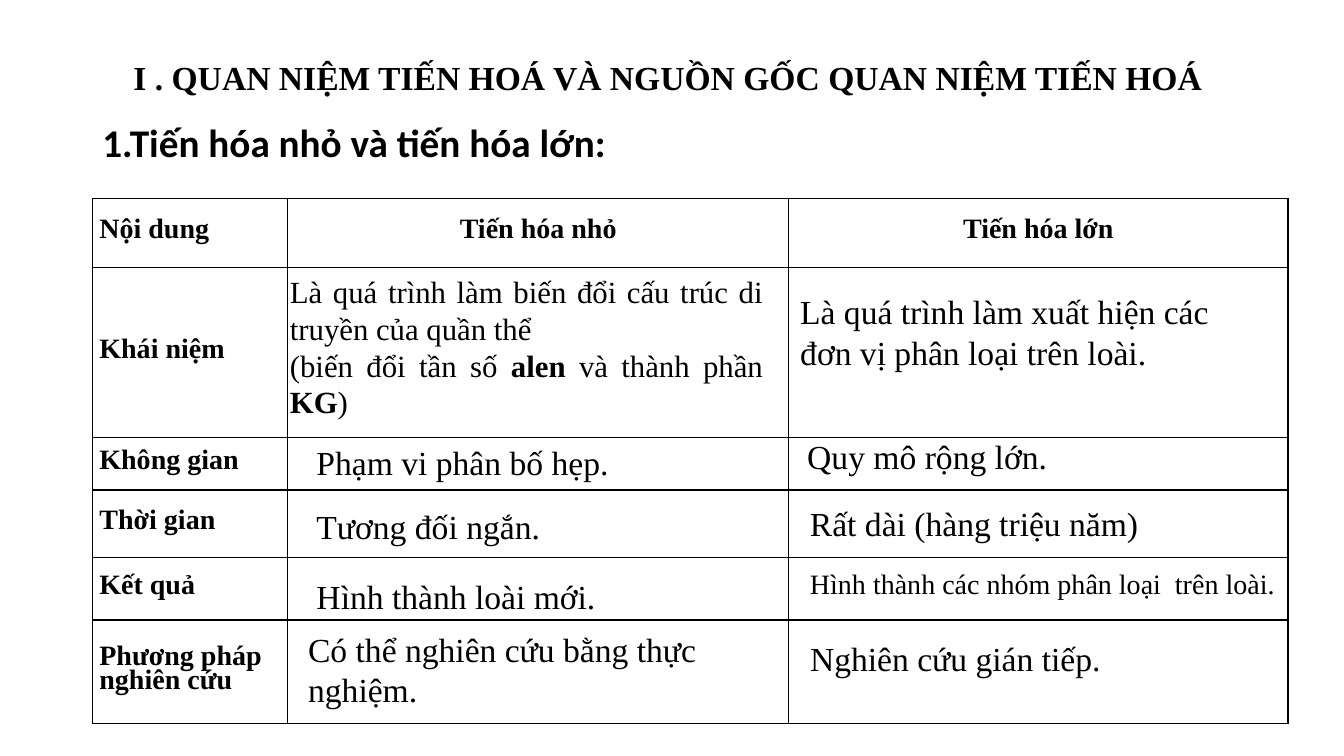
from lxml.etree import SubElement
from pptx import Presentation
from pptx.dml.color import RGBColor
from pptx.enum.text import MSO_ANCHOR, PP_ALIGN
from pptx.oxml.ns import qn
from pptx.util import Pt

# Content
COLORS = {"text": "000000", "border": "000000"}
SERIF = "Times New Roman"
SANS = "Calibri"

TITLE = "I . QUAN NIỆM TIẾN HOÁ VÀ NGUỒN GỐC QUAN NIỆM TIẾN HOÁ "
SUBTITLE = "1.Tiến hóa nhỏ và tiến hóa lớn:"
HEADERS = ["Nội dung", "Tiến hóa nhỏ", "Tiến hóa lớn"]
CRITERIA = ["Khái niệm", "Không gian", "Thời gian", "Kết quả",
            "Phương pháp nghiên cứu"]

# Definition of small evolution: paragraphs of (text, bold) runs
DEFINITION = [
    [("Là quá trình làm biến đổi cấu trúc di truyền của quần thể ", False)],
    [("(biến đổi tần số ", False), ("alen ", True),
     ("và thành phần ", False), ("KG", True), (")", False)],
]

# Answers laid over the table: text, left, top, width, height, size
ANSWERS = [
    ("Là quá trình làm xuất hiện các đơn vị phân loại trên loài.",
     564.5, 204.5, 317, 65.5, 24),
    ("Phạm vi phân bố hẹp.", 219, 312, 330, 36, 24),
    ("Quy mô rộng lớn.", 569.5, 308, 233, 36, 24),
    ("Tương đối ngắn.", 219, 358, 199.5, 36, 24),
    ("Rất dài (hàng triệu năm)", 571.5, 355.5, 257, 36, 24),
    ("Hình thành loài mới.", 219, 407.5, 312.5, 36, 24),
    ("Hình thành các nhóm phân loại  trên loài.", 571.5, 401, 363, 31.5, 20),
    ("Có thể nghiên cứu bằng thực nghiệm.", 213, 445.5, 358.5, 65.5, 24),
    ("Nghiên cứu gián tiếp.", 571.5, 452, 314, 36, 24),
]

# Layout
LEFT = 66
COLUMN_WIDTHS = [139.5, 358, 356.5]
ROW_HEIGHTS = [49, 121.5, 37.5, 48.5, 44.5, 74]


def format_run(run, size, bold=False, font=SERIF):
    run.font.name = font
    run.font.size = Pt(size)
    run.font.bold = bold
    run.font.color.rgb = RGBColor.from_string(COLORS["text"])


def add_text(paragraphs, left, top, width, height, size, font=SERIF):
    """Add a wrapped text box from paragraphs of (text, bold) runs."""
    box = slide.shapes.add_textbox(Pt(left), Pt(top), Pt(width), Pt(height))
    text_frame = box.text_frame
    text_frame.word_wrap = True
    for index, runs in enumerate(paragraphs):
        paragraph = text_frame.add_paragraph() if index else text_frame.paragraphs[0]
        for text, bold in runs:
            run = paragraph.add_run()
            run.text = text
            format_run(run, size, bold, font)
    return text_frame


def set_borders(cell):
    properties = cell._tc.get_or_add_tcPr()
    for position, side in enumerate(("a:lnL", "a:lnR", "a:lnT", "a:lnB")):
        line = SubElement(properties, qn(side), w=str(Pt(1)))
        fill = SubElement(line, qn("a:solidFill"))
        SubElement(fill, qn("a:srgbClr"), val=COLORS["border"])
        properties.insert(position, line)


def fill_cell(cell, text, alignment):
    cell.vertical_anchor = MSO_ANCHOR.MIDDLE
    cell.margin_left = cell.margin_right = Pt(5)
    cell.margin_top = cell.margin_bottom = 0
    cell.text_frame.text = text
    paragraph = cell.text_frame.paragraphs[0]
    paragraph.alignment = alignment
    paragraph.line_spacing = Pt(17)
    format_run(paragraph.runs[0], 20, True)


presentation = Presentation()
presentation.slide_width = Pt(960)
presentation.slide_height = Pt(540)
slide = presentation.slides.add_slide(presentation.slide_layouts[6])

# Subtitle
subtitle = add_text([[(SUBTITLE, True)]], LEFT, 85, 828, 366.5, 28, SANS)
subtitle.paragraphs[0].line_spacing = 0.9
subtitle.paragraphs[0].space_before = Pt(10)

# Comparison table
table = slide.shapes.add_table(
    len(ROW_HEIGHTS), len(COLUMN_WIDTHS), Pt(LEFT), Pt(142),
    Pt(sum(COLUMN_WIDTHS)), Pt(sum(ROW_HEIGHTS))).table
table.first_row = False
table.horz_banding = False
for column, width in zip(table.columns, COLUMN_WIDTHS):
    column.width = Pt(width)
for row, height in zip(table.rows, ROW_HEIGHTS):
    row.height = Pt(height)
for cell in table.iter_cells():
    cell.fill.background()
    set_borders(cell)
for index, header in enumerate(HEADERS):
    fill_cell(table.cell(0, index), header,
              PP_ALIGN.CENTER if index else PP_ALIGN.JUSTIFY)
for index, criterion in enumerate(CRITERIA, start=1):
    is_last = index == len(CRITERIA)
    fill_cell(table.cell(index, 0), criterion,
              PP_ALIGN.LEFT if is_last else PP_ALIGN.JUSTIFY)

# Title
title = add_text([[(TITLE, True)]], LEFT, 29, 828, 56, 24)
title.vertical_anchor = MSO_ANCHOR.MIDDLE
title.paragraphs[0].alignment = PP_ALIGN.CENTER
title.paragraphs[0].line_spacing = 0.9

# Answers over the table
definition = add_text(DEFINITION, 200, 191, 352, 114, 22)
for paragraph in definition.paragraphs:
    paragraph.alignment = PP_ALIGN.JUSTIFY
for text, *place, size in ANSWERS:
    add_text([[(text, False)]], *place, size)

presentation.save("out.pptx")
